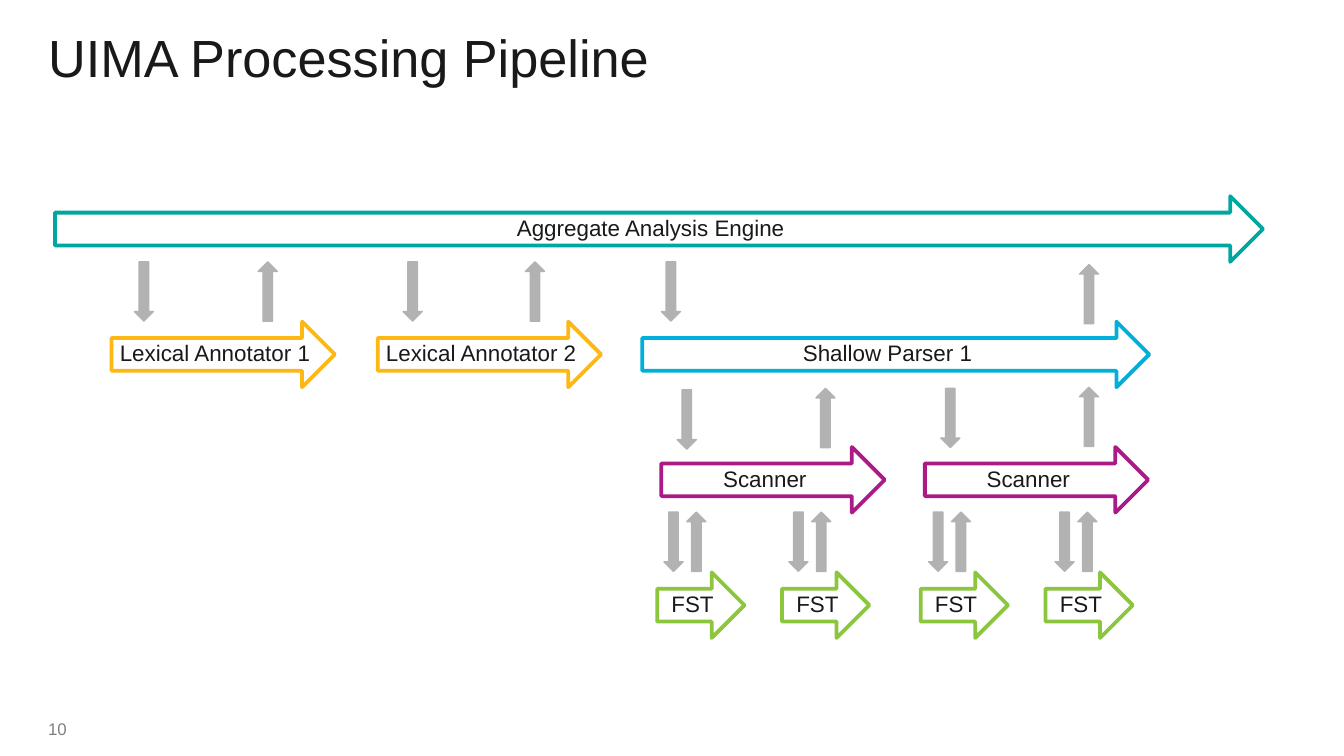
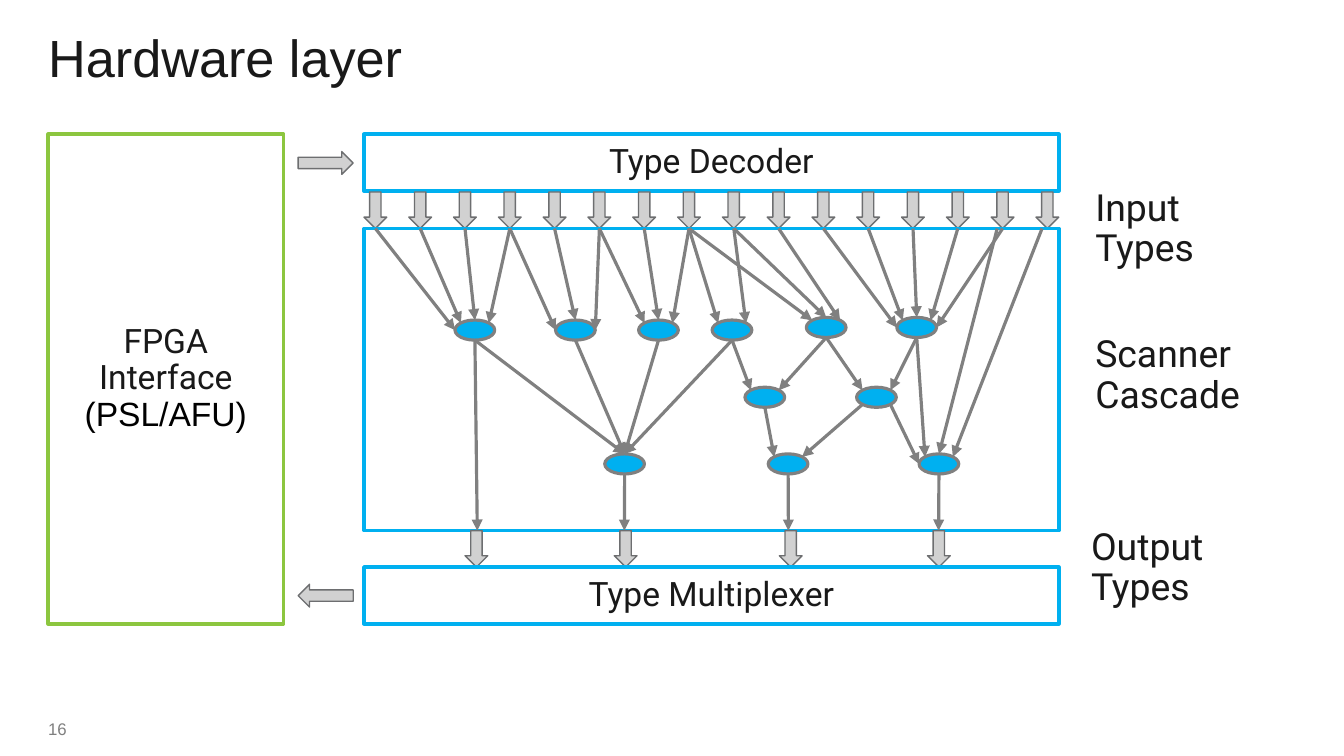
from lxml import etree
from pptx import Presentation
from pptx import util as u
from pptx.dml.color import RGBColor
from pptx.enum import shapes, text
from pptx.oxml.ns import qn

COLORS = {
    "ink": "191919", "black": "000000", "muted": "7F7F7F", "white": "FFFFFF",
    "teal": "00A6A0", "amber": "FDB813", "cyan": "00B0DA", "purple": "AB1A86",
    "green": "8CC63F", "call": "B2B2B2", "blue": "00B0F0", "link": "808080",
    "flow": "D1D1D1", "flow_edge": "6D6E70",
}
SHAPE = shapes.MSO_SHAPE
CENTER, LEFT = text.PP_ALIGN.CENTER, text.PP_ALIGN.LEFT

# Pipeline slide, in cm
LANE_TOP, LANE_PITCH, LANE_H = 3.71, 2.37, 1.24
STAGE_W, FST_W = 4.22, 1.65
LANES = [  # label, row, left, width, colour
    ("Aggregate Analysis Engine", 0, 1.04, 22.83, "teal"),
    ("Lexical Annotator 1", 1, 2.11, STAGE_W, "amber"),
    ("Lexical Annotator 2", 1, 7.14, STAGE_W, "amber"),
    ("Shallow Parser 1", 1, 12.14, 9.58, "cyan"),
    ("Scanner", 2, 12.5, STAGE_W, "purple"),
    ("Scanner", 2, 17.48, STAGE_W, "purple"),
] + [("FST", 3, left, FST_W, "green") for left in (12.42, 14.78, 17.4, 19.76)]
CALL_W, CALL_H = 0.36, 1.12
CALLS = [  # left, top of each call (down) and return (up)
    ((2.54, 4.95), (4.88, 4.95)),
    ((7.62, 4.95), (9.93, 4.95)),
    ((12.5, 4.95), (20.4, 5.0)),
    ((12.8, 7.37), (15.42, 7.34)),
    ((17.78, 7.34), (20.4, 7.32)),
] + [((x, 9.68), (x + 0.43, 9.68)) for x in (12.55, 14.91, 17.55, 19.94)]

# Hardware slide, in cm
PANEL_X, PANEL_W, BAR_H = 6.88, 13.13, 1.07
DECODER_Y, CASCADE_Y, CASCADE_H, MUX_Y = 2.54, 4.32, 5.71, 10.72
CASCADE_END = CASCADE_Y + CASCADE_H
FLOW_W, FLOW_H = 0.43, 0.69
INPUTS, INPUT_PITCH = 16, 12.7 / 15
NODE_W, NODE_H = 0.75, 0.38
NODES = {
    "A": (8.6, 6.05), "B": (10.5, 6.05), "C": (12.07, 6.05), "D": (13.46, 6.05),
    "E": (15.24, 6.0), "F": (16.95, 6.0), "G": (14.08, 7.32), "H": (16.19, 7.32),
    "I": (11.43, 8.58), "J": (14.52, 8.58), "K": (17.37, 8.58),
}
PORTS = {  # share of node width and height
    "n": (0.5, 0), "ne": (0.85, 0.15), "e": (1, 0.5), "se": (0.85, 0.85),
    "s": (0.5, 1), "sw": (0.15, 0.85), "w": (0, 0.5), "nw": (0.15, 0.15),
}
INPUT_LINKS = {  # node: (input number, port) pairs
    "A": [(0, "w"), (1, "nw"), (2, "n"), (3, "ne")],
    "B": [(3, "w"), (4, "n"), (5, "e")],
    "C": [(5, "nw"), (6, "n"), (7, "ne")],
    "D": [(7, "nw"), (8, "ne")],
    "E": [(7, "nw"), (8, "n"), (9, "ne")],
    "F": [(10, "w"), (11, "nw"), (12, "n"), (13, "ne"), (14, "e")],
    "K": [(13.88, "n"), (14.88, "ne")],
}
NODE_LINKS = [
    ("A", "s", "I", "n"), ("B", "s", "I", "n"), ("C", "s", "I", "n"),
    ("D", "s", "I", "n"), ("D", "s", "G", "nw"), ("E", "s", "G", "ne"),
    ("E", "s", "H", "nw"), ("F", "s", "H", "ne"), ("F", "s", "K", "nw"),
    ("H", "se", "K", "w"), ("H", "sw", "J", "ne"), ("G", "s", "J", "nw"),
]
OUTPUTS = {  # node: (end of its link, left of its output arrow)
    "A": (9.02, 8.79), "I": (11.8, 11.61), "J": (14.9, 14.73), "K": (17.74, 17.53),
}
SIDE_LABELS = [  # text, left, top, width, height
    ("Input Types", 20.45, 3.45, 3.81, 1.02),
    ("Scanner\vCascade", 20.45, 6.22, 3.6, 1.8),
    ("Output Types", 20.37, 9.86, 4.32, 1.02),
]


def rgb(name):
    return RGBColor.from_string(COLORS[name])


def box(*lengths):
    return [u.Cm(v) for v in lengths]


def write(p, content, size, font="Arial", color="ink", align=LEFT, spacing=0.9):
    """Fill a paragraph; a vertical tab in the content breaks the line."""
    p.alignment, p.line_spacing = align, spacing
    for i, part in enumerate(content.split("\v")):
        if i:
            p.add_line_break()
        r = p.add_run()
        r.text = part
        r.font.size, r.font.name = u.Pt(size), font
        r.font.color.rgb = rgb(color)


def clear_insets(tf):
    tf.margin_left = tf.margin_top = tf.margin_right = tf.margin_bottom = 0


def add_slide(prs, title, number):
    s = prs.slides.add_slide(prs.slide_layouts[5])
    sp = s.shapes.title
    sp.left, sp.top, sp.width, sp.height = box(0.91, 0.61, 24.13, 1.09)
    tf = sp.text_frame
    clear_insets(tf)
    tf.vertical_anchor = text.MSO_ANCHOR.TOP
    tf.auto_size = text.MSO_AUTO_SIZE.SHAPE_TO_FIT_TEXT
    write(tf.paragraphs[0], title, 28)
    tf = add_text_box(s, 0.91, 13.59, 5.89, 0.48)
    clear_insets(tf)
    write(tf.paragraphs[0], str(number), 9, color="muted", spacing=1.0)
    return s


def add_text_box(s, *place):
    tf = s.shapes.add_textbox(*box(*place)).text_frame
    tf.word_wrap = True
    return tf


def add_figure(s, kind, place, line, width, fill=None, rotation=0):
    sp = s.shapes.add_shape(kind, *box(*place))
    sp.shadow.inherit = False
    sp.rotation = rotation
    if fill:
        sp.fill.solid()
        sp.fill.fore_color.rgb = rgb(fill)
    else:
        sp.fill.background()
    sp.line.color.rgb = rgb(line)
    sp.line.width = u.Pt(width)
    return sp


def add_lane(s, label, row, left, width, color):
    place = left, LANE_TOP + row * LANE_PITCH, width, LANE_H
    tf = add_figure(s, SHAPE.RIGHT_ARROW, place, color, 2, "white").text_frame
    clear_insets(tf)
    tf.vertical_anchor = text.MSO_ANCHOR.MIDDLE
    write(tf.paragraphs[0], label, 12, align=CENTER)


def add_call(s, left, top, rotation):
    add_figure(s, SHAPE.DOWN_ARROW, (left, top, CALL_W, CALL_H),
               "call", 0.75, "call", rotation)


def add_flow(s, left, top, height=FLOW_H, rotation=0):
    add_figure(s, SHAPE.DOWN_ARROW, (left, top, FLOW_W, height),
               "flow_edge", 0.75, "flow", rotation)


def add_panel(s, place, line="blue", lines=()):
    """Outlined box; lines holds (text, font, colour) per paragraph."""
    tf = add_figure(s, SHAPE.RECTANGLE, place, line, 2).text_frame
    tf.vertical_anchor = text.MSO_ANCHOR.MIDDLE
    for i, (content, font, color) in enumerate(lines):
        p = tf.add_paragraph() if i else tf.paragraphs[0]
        write(p, content, 18, font, color, CENTER)


def add_link(s, start, end):
    c = s.shapes.add_connector(shapes.MSO_CONNECTOR.STRAIGHT, *box(*start, *end))
    c.line.color.rgb = rgb("link")
    c.line.width = u.Pt(1.7)
    sp_pr = c._element.spPr
    etree.SubElement(sp_pr.get_or_add_ln(), qn("a:tailEnd"), type="triangle")
    etree.SubElement(sp_pr, qn("a:effectLst"))


def port(node, side):
    (x, y), (dx, dy) = NODES[node], PORTS[side]
    return x + dx * NODE_W, y + dy * NODE_H


def build_pipeline(prs):
    s = add_slide(prs, "UIMA Processing Pipeline", 10)
    for lane in LANES:
        add_lane(s, *lane)
    for call, answer in CALLS:
        add_call(s, *call, 0)
        add_call(s, *answer, 180)


def build_hardware(prs):
    s = add_slide(prs, "Hardware layer", 16)
    add_panel(s, (PANEL_X, DECODER_Y, PANEL_W, BAR_H),
              lines=[("Type Decoder", "Roboto", "ink")])
    for i in range(INPUTS):
        add_flow(s, PANEL_X + i * INPUT_PITCH, 3.63)
    add_panel(s, (PANEL_X, CASCADE_Y, PANEL_W, CASCADE_H))
    for place in NODES.values():
        add_figure(s, SHAPE.FLOWCHART_CONNECTOR, (*place, NODE_W, NODE_H),
                   "link", 1.7, "blue")
    for node, links in INPUT_LINKS.items():
        for i, side in links:
            x = PANEL_X + FLOW_W / 2 + i * INPUT_PITCH
            add_link(s, (x, CASCADE_Y), port(node, side))
    for source, out_side, target, in_side in NODE_LINKS:
        add_link(s, port(source, out_side), port(target, in_side))
    for node, (x, arrow_left) in OUTPUTS.items():
        add_link(s, port(node, "s"), (x, CASCADE_END))
        add_flow(s, arrow_left, CASCADE_END)
    add_panel(s, (PANEL_X, MUX_Y, PANEL_W, BAR_H),
              lines=[("Type Multiplexer", "Roboto", "ink")])
    add_panel(s, (0.91, DECODER_Y, 4.45, MUX_Y + BAR_H - DECODER_Y), "green",
              [("FPGA Interface", "Roboto", "ink"), ("(PSL/AFU)", "Arial", "black")])
    for top, rotation in ((DECODER_Y, 270), (MUX_Y, 90)):
        add_flow(s, 5.94, top + 0.02, 1.04, rotation)
    for label, *place in SIDE_LABELS:
        tf = add_text_box(s, *place)
        tf.auto_size = text.MSO_AUTO_SIZE.SHAPE_TO_FIT_TEXT
        write(tf.paragraphs[0], label, 20, "Roboto")


def main():
    prs = Presentation()
    prs.slide_width, prs.slide_height = box(25.4, 14.29)
    build_pipeline(prs)
    build_hardware(prs)
    prs.save("out.pptx")


if __name__ == "__main__":
    main()
